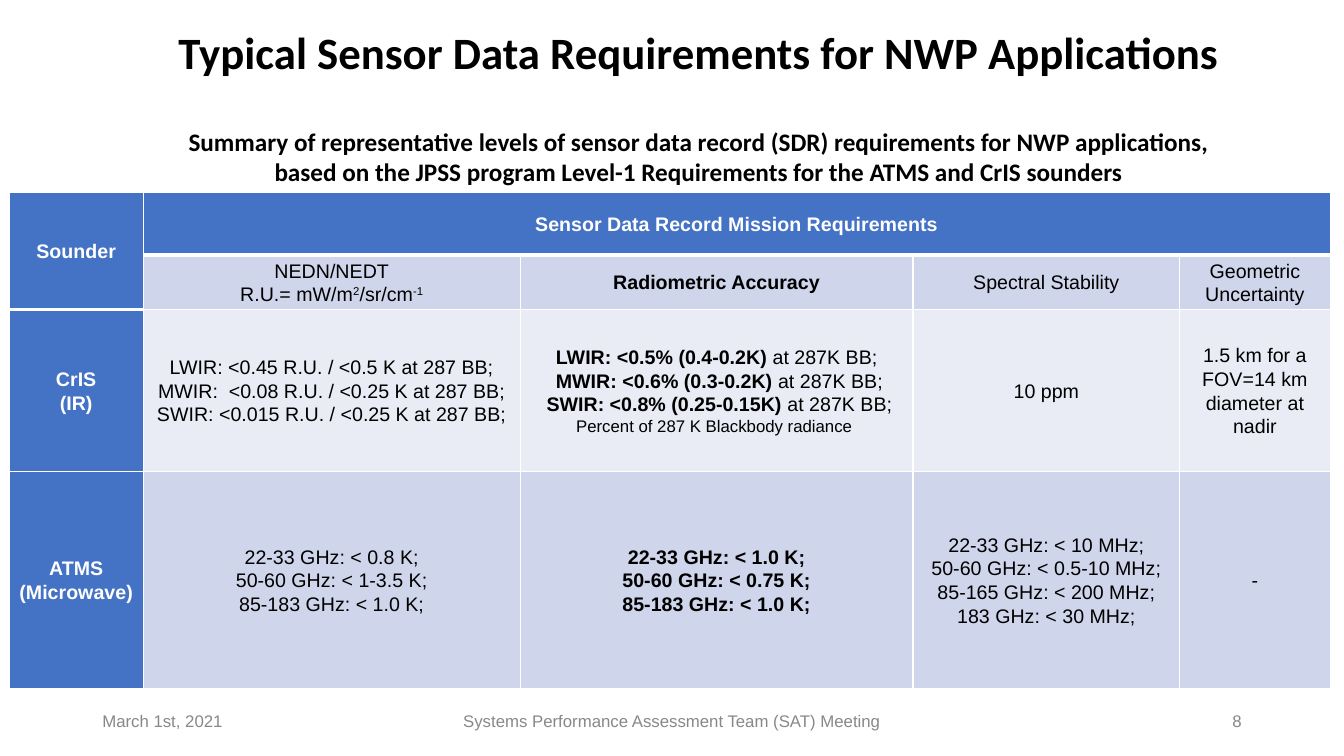
from lxml.etree import SubElement
from pptx import Presentation
from pptx.dml.color import RGBColor
from pptx.enum.text import MSO_ANCHOR, PP_ALIGN
from pptx.oxml.ns import qn
from pptx.util import Cm, Pt

BLUE, PALE, PALER = "4472C4", "CFD5EA", "E9EBF5"
WHITE, BLACK, GREY = "FFFFFF", "000000", "888888"


def color(value):
    return RGBColor.from_string(value)


def write(frame, text, align=PP_ALIGN.CENTER, spacing=None, **run_format):
    """Text is a string or a list of paragraphs; a paragraph is a string or
    a list of runs; a run is a string or a (string, format) pair."""
    paragraphs = [text] if isinstance(text, str) else text
    for index, runs in enumerate(paragraphs):
        paragraph = frame.add_paragraph() if index else frame.paragraphs[0]
        paragraph.alignment = align
        if spacing:
            paragraph.line_spacing = spacing
        for run in [runs] if isinstance(runs, str) else runs:
            words, own_format = (run, {}) if isinstance(run, str) else run
            for number, line in enumerate(words.split("\n")):
                if number:
                    paragraph.add_line_break()
                if line:
                    add_run(paragraph, line, **{**run_format, **own_format})


def add_run(paragraph, text, size=14, font="Arial", ink=BLACK, bold=False, raised=False):
    run = paragraph.add_run()
    run.text = text
    run.font.size = Pt(size)
    run.font.name = font
    run.font.bold = bold
    run.font.color.rgb = color(ink)
    if raised:
        run.font._element.set("baseline", "30000")


class SlideBuilder:
    def __init__(self, slide):
        self.slide = slide
        self.heading = dict(font="Calibri", bold=True)
        self.footer = dict(size=12, ink=GREY)
        self.cell_spacing = 1.07

    def text(self, left, top, width, height, words, anchor=MSO_ANCHOR.MIDDLE, **text_format):
        box = self.slide.shapes.add_textbox(Cm(left), Cm(top), Cm(width), Cm(height))
        box.text_frame.word_wrap = True
        box.text_frame.vertical_anchor = anchor
        write(box.text_frame, words, **text_format)

    def table(self, left, top, widths, heights):
        table = self.slide.shapes.add_table(
            len(heights), len(widths), Cm(left), Cm(top),
            Cm(sum(widths)), Cm(sum(heights))).table
        table.first_row = table.horz_banding = False
        for column, width in zip(table.columns, widths):
            column.width = Cm(width)
        for row, height in zip(table.rows, heights):
            row.height = Cm(height)
        return table

    def cell(self, cell, words, fill, top=1, bottom=1, **text_format):
        cell.margin_left = cell.margin_right = Cm(0.18)
        cell.margin_top = cell.margin_bottom = 0
        cell.vertical_anchor = MSO_ANCHOR.MIDDLE
        for side, points in zip("LRTB", (1, 1, top, bottom)):
            self.border(cell, side, points)
        cell.fill.solid()
        cell.fill.fore_color.rgb = color(fill)
        write(cell.text_frame, words, spacing=self.cell_spacing, **text_format)

    def border(self, cell, side, points):
        properties = cell._tc.get_or_add_tcPr()
        line = SubElement(properties, qn(f"a:ln{side}"), w=str(Pt(points)))
        SubElement(SubElement(line, qn("a:solidFill")), qn("a:srgbClr"), val=WHITE)


BOLD, RAISED = dict(bold=True), dict(raised=True)

# Requirements by sounder; None marks a cell covered by a merged one
REQUIREMENTS = [
    ["Sounder", "Sensor Data Record Mission Requirements", None, None, None],
    [None,
     [["NEDN/NEDT\nR.U.= mW/m", ("2", RAISED), "/sr/cm", ("-1", RAISED)]],
     [[("Radiometric Accuracy", BOLD)]],
     "Spectral Stability",
     "Geometric Uncertainty"],
    ["CrIS\n(IR)",
     "LWIR: <0.45 R.U. / <0.5 K at 287 BB;\nMWIR:  <0.08 R.U. / <0.25 K at 287 BB;\n"
     " SWIR: <0.015 R.U. / <0.25 K at 287 BB; ",
     [[("LWIR: <0.5% (0.4-0.2K) ", BOLD), "at 287K BB;\n ",
       ("MWIR: <0.6% (0.3-0.2K) ", BOLD), "at 287K BB;\n ",
       ("SWIR: <0.8% (0.25-0.15K) ", BOLD), "at 287K BB;"],
      [("Percent of 287 K Blackbody radiance ", dict(size=12))]],
     "10 ppm",
     "1.5 km for a FOV=14 km diameter at nadir"],
    ["ATMS\n(Microwave)",
     "22-33 GHz: < 0.8 K;\n50-60 GHz: < 1-3.5 K;\n 85-183 GHz: < 1.0 K; ",
     [[("22-33 GHz: < 1.0 K;\n50-60 GHz: < 0.75 K;\n 85-183 GHz: < 1.0 K; ", BOLD)]],
     "22-33 GHz: < 10 MHz;\n50-60 GHz: < 0.5-10 MHz;\n"
     " 85-165 GHz: < 200 MHz; \n183 GHz: < 30 MHz;",
     "-"],
]


def main():
    deck = Presentation()
    deck.slide_width, deck.slide_height = Cm(33.87), Cm(19.05)
    builder = SlideBuilder(deck.slides.add_slide(deck.slide_layouts[6]))

    # Footer
    for left, width, words, align in [
        (2.33, 7.62, "March 1st, 2021", PP_ALIGN.LEFT),
        (11.22, 11.43, "Systems Performance Assessment Team (SAT) Meeting", PP_ALIGN.CENTER),
        (23.92, 7.62, "8", PP_ALIGN.RIGHT),
    ]:
        builder.text(left, 17.66, width, 1.01, words, align=align, **builder.footer)

    # Title and summary
    builder.text(3.68, 0.69, 27.86, 1.37, "Typical Sensor Data Requirements for NWP Applications",
                 size=32, spacing=0.9, **builder.heading)
    builder.text(4.29, 3.05, 26.64, 1.8,
                 "Summary of representative levels of sensor data record (SDR) requirements "
                 "for NWP applications, based on the JPSS program Level-1 Requirements "
                 "for the ATMS and CrIS sounders",
                 anchor=MSO_ANCHOR.TOP, size=18, **builder.heading)

    # Requirements table: blue headings, banded body
    table = builder.table(0.23, 4.86, [3.38, 9.5, 9.9, 6.72, 3.79], [1.57, 1.37, 4.09, 5.46])
    table.cell(0, 0).merge(table.cell(1, 0))
    table.cell(0, 1).merge(table.cell(0, 4))
    for row, entries in enumerate(REQUIREMENTS):
        for column, entry in enumerate(entries):
            heading = row == 0 or column == 0
            band = PALE if row % 2 else PALER
            builder.cell(table.cell(row, column), entry or "",
                         BLUE if heading else band,
                         top=3 if row == 1 else 1, bottom=3 if row == 0 else 1,
                         ink=WHITE if heading else BLACK, bold=heading)

    deck.save("out.pptx")


if __name__ == "__main__":
    main()
